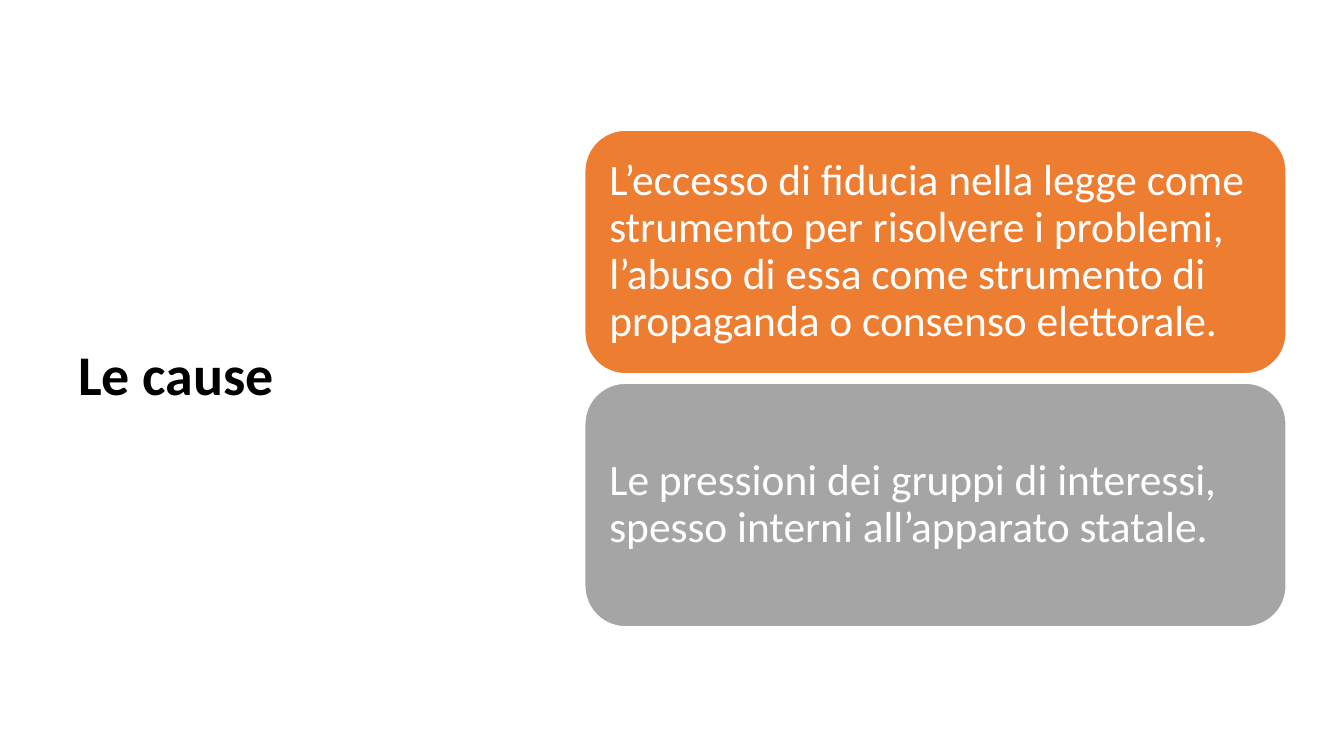
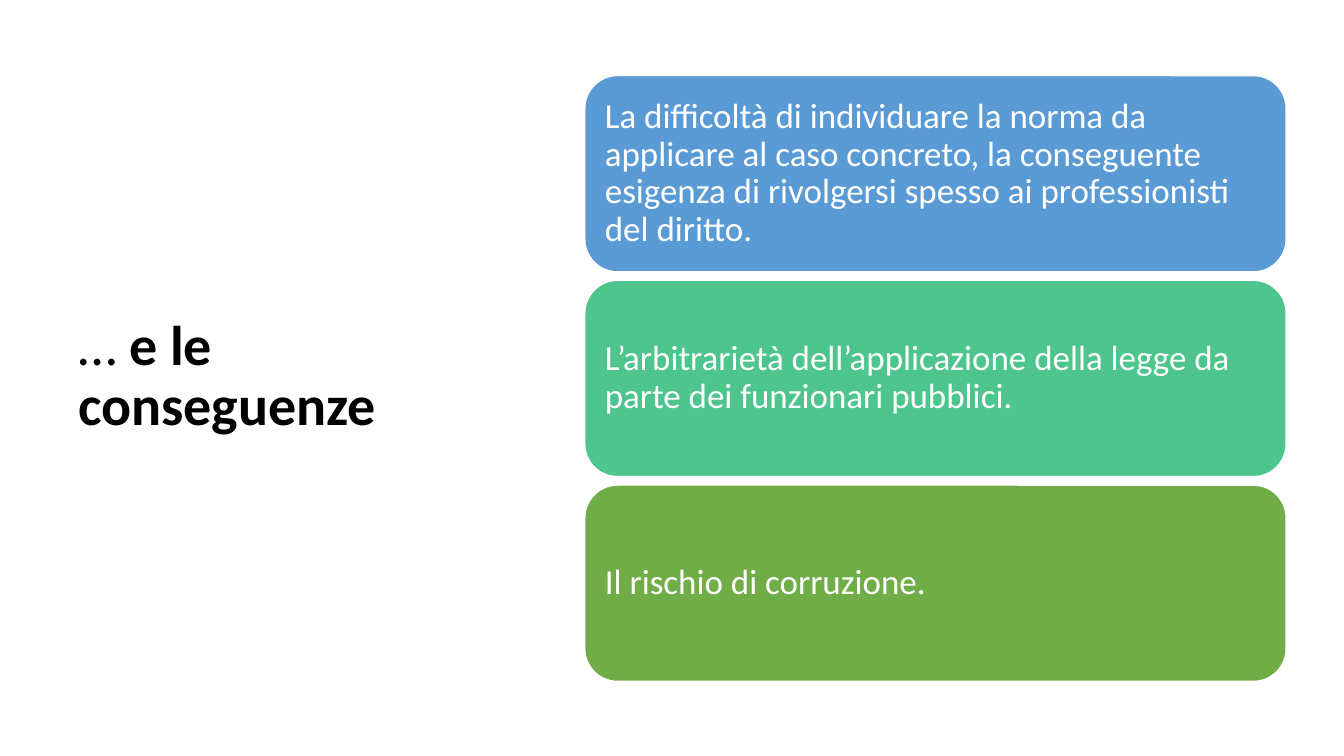
from pptx import Presentation
from pptx.dml.color import RGBColor
from pptx.enum.shapes import MSO_SHAPE
from pptx.enum.text import MSO_ANCHOR, PP_ALIGN
from pptx.util import Pt

ROUND = MSO_SHAPE.ROUNDED_RECTANGLE
MID = MSO_ANCHOR.MIDDLE
LEFT = PP_ALIGN.LEFT

PX = 9525
FONT = "Calibri"
HUES = {
    "black": "000000",
    "white": "FFFFFF",
    "orange": "ED7D31",
    "gray": "A5A5A5",
    "blue": "5B9BD5",
    "mint": "4DC58D",
    "green": "70AD47",
}
BOX_X, BOX_W = 557, 668

SLIDES = [
    {
        "title": [("Le cause", True)],
        "top": 124, "high": 232, "gap": 9, "pad": 12, "size": 31,
        "boxes": [
            ("orange", "L’eccesso di fiducia nella legge come strumento per risolvere i problemi, "
                       "l’abuso di essa come strumento di propaganda o consenso elettorale."),
            ("gray", "Le pressioni dei gruppi di interessi, spesso interni all’apparato statale."),
        ],
    },
    {
        "title": [("… ", False), ("e le conseguenze", True)],
        "top": 72, "high": 187, "gap": 8, "pad": 10, "size": 25,
        "boxes": [
            ("blue", "La difficoltà di individuare la norma da applicare al caso concreto, "
                     "la conseguente esigenza di rivolgersi spesso ai professionisti del diritto."),
            ("mint", "L’arbitrarietà dell’applicazione della legge da parte dei funzionari pubblici."),
            ("green", "Il rischio di corruzione."),
        ],
    },
]


def color(name):
    return RGBColor.from_string(HUES[name])


def write(shape, runs, size, hue):
    frame = shape.text_frame
    frame.word_wrap = True
    frame.vertical_anchor = MID
    para = frame.paragraphs[0]
    para.alignment = LEFT
    para.line_spacing = 0.9
    for text, bold in runs:
        run = para.add_run()
        run.text = text
        run.font.name = FONT
        run.font.size = Pt(size)
        run.font.bold = bold
        run.font.color.rgb = color(hue)


deck = Presentation()
deck.slide_width = 1280 * PX
deck.slide_height = 720 * PX

for page in SLIDES:
    slide = deck.slides.add_slide(deck.slide_layouts[6])
    title = slide.shapes.add_textbox(65 * PX, 122 * PX, 378 * PX, 475 * PX)
    write(title, page["title"], 40, "black")

    for row, (hue, text) in enumerate(page["boxes"]):
        y = page["top"] + row * (page["high"] + page["gap"])
        box = slide.shapes.add_shape(ROUND, BOX_X * PX, y * PX, BOX_W * PX, page["high"] * PX)
        box.shadow.inherit = False
        box.fill.solid()
        box.fill.fore_color.rgb = color(hue)
        box.line.color.rgb = color("white")
        box.line.width = Pt(1)
        frame = box.text_frame
        frame.margin_left = frame.margin_right = page["pad"] * PX
        frame.margin_top = frame.margin_bottom = page["pad"] * PX
        write(box, [(text, False)], page["size"], "white")

deck.save("out.pptx")
